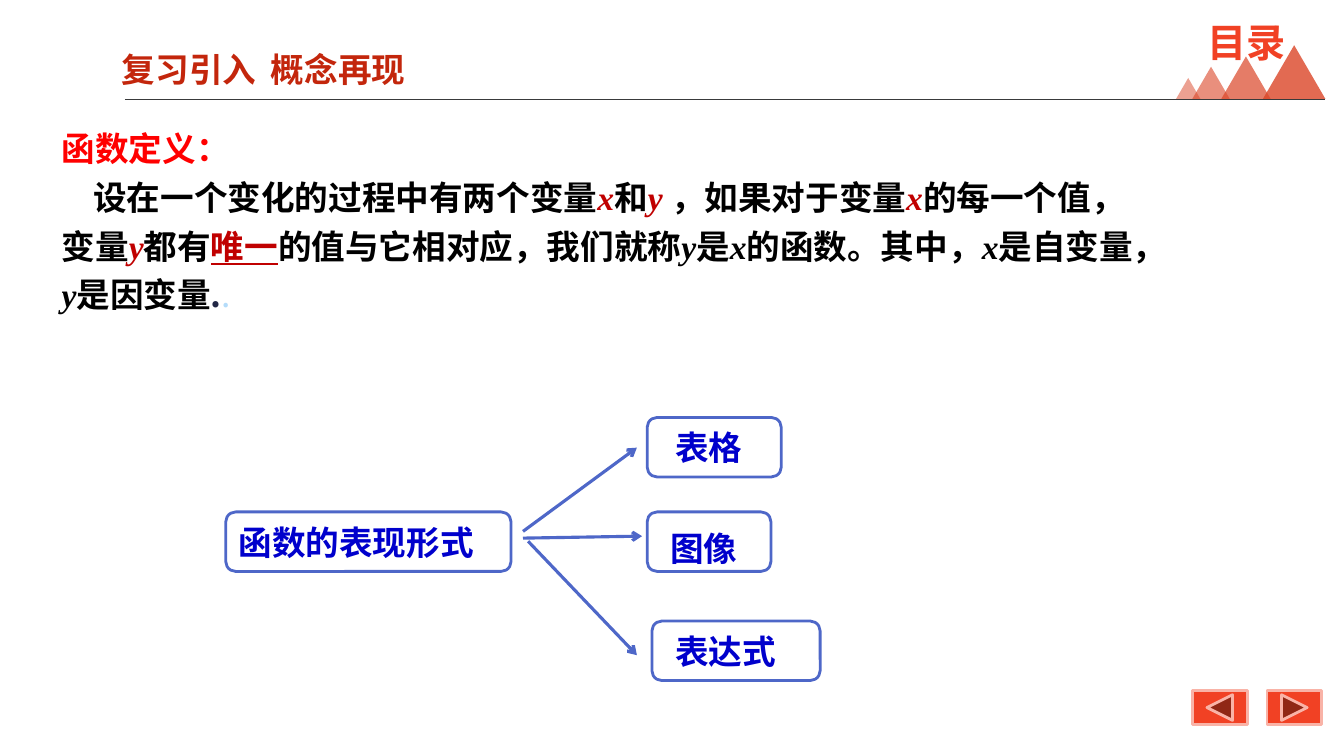
from lxml import etree
from pptx import Presentation
from pptx.dml.color import RGBColor
from pptx.enum.shapes import MSO_CONNECTOR, MSO_SHAPE as SHAPE
from pptx.enum.text import MSO_ANCHOR as ANCHOR, MSO_AUTO_SIZE as AUTO, PP_ALIGN as ALIGN
from pptx.oxml.ns import qn
from pptx.util import Cm, Pt

CJK, TIMES = "Noto Sans CJK SC", "Times New Roman"
RED, BLUE, ORANGE = "C00000", "4E67C8", "F14124"


def rgb(color):
    return RGBColor.from_string(color)


def add_text(p, text, size=24, font=CJK, color="000000", bold=True, italic=False,
             underline=False, spacing=0):
    """Add a run; spacing is extra space after each character, in points."""
    r = p.add_run()
    r.text = text
    f = r.font
    f.size, f.name, f.bold, f.italic, f.underline = Pt(size), font, bold, italic, underline
    f.color.rgb = rgb(color)
    etree.SubElement(f._element, qn("a:ea")).set("typeface", CJK)
    if spacing:
        f._element.set("spc", str(spacing * 100))


prs = Presentation()
prs.slide_width, prs.slide_height = Cm(33.87), Cm(19.05)
s = prs.slides.add_slide(prs.slide_layouts[1])
title, body = s.placeholders

# Header: mountains, rule and contents label
for left, width, opacity in [(31.83, 1.57, 80), (30.78, 1.24, 70), (30.05, 0.94, 60), (29.64, 0.61, 50)]:
    height = 0.86 * width
    sp = s.shapes.add_shape(SHAPE.ISOSCELES_TRIANGLE, Cm(left), Cm(2.49 - height), Cm(width), Cm(height))
    sp.shadow.inherit = False
    sp.fill.solid()
    sp.fill.fore_color.rgb = rgb("DB4527")
    sp.line.fill.background()
    fill_color = sp.fill._xPr.find(qn("a:solidFill"))[0]
    etree.SubElement(fill_color, qn("a:alpha")).set("val", str(opacity * 1000))

contents = s.shapes.add_textbox(Cm(30.18), Cm(0.33), Cm(2.49), Cm(1.45))
contents.text_frame.word_wrap = True
p = contents.text_frame.paragraphs[0]
p.alignment = ALIGN.CENTER
add_text(p, "目录", size=28, font=TIMES, color=ORANGE)

# Title
title.left, title.top, title.width, title.height = Cm(2.82), Cm(0.89), Cm(7.82), Cm(1.37)
tf = title.text_frame
tf.auto_size, tf.vertical_anchor = AUTO.NONE, ANCHOR.TOP
p = tf.paragraphs[0]
p.alignment, p.line_spacing = ALIGN.LEFT, 1.2
for text, spacing in [("复习引入", 0), (" ", 5), ("概念再现", 0)]:
    add_text(p, text, font="Arial", color="C3260C", spacing=spacing)

# Definition
plain = {}
var = {"font": TIMES, "italic": True}
red_var = {**var, "color": RED}
definition = [
    [("函数定义：", {"color": "FF0000"})],
    [("设在一个变化的过程中有两个变量", plain), ("x", red_var), ("和", plain), ("y ", red_var),
     ("，如果对于变量", plain), ("x", red_var), ("的每一个值，", plain)],
    [("变量", plain), ("y", red_var), ("都有", plain), ("唯一", {"color": RED, "underline": True}),
     ("的值与它相对应，我们就称", plain), ("y", var), ("是", plain), ("x", var),
     ("的函数。其中，", plain), ("x", var), ("是自变量，", plain)],
    [("y", var), ("是因变量", plain), (".", {"color": "212745"}),
     (".", {"color": "B4DCFA", "bold": False})],
]
body.left, body.top, body.width, body.height = Cm(1.3), Cm(3.1), Cm(32.1), Cm(5.9)
tf = body.text_frame
tf.auto_size = AUTO.NONE
for i, runs in enumerate(definition):
    p = tf.add_paragraph() if i else tf.paragraphs[0]
    pPr = p._p.get_or_add_pPr()
    pPr.set("marL", "0")
    pPr.set("indent", str(Cm(0.8) if i == 1 else 0))
    etree.SubElement(pPr, qn("a:buNone"))
    p.space_before = Pt(6 if i else 0)
    for text, style in runs:
        add_text(p, text, **style)

# Diagram boxes: text, left, top, width, left inset, downward text shift
boxes = [
    ("函数的表现形式", 5.69, 12.9, 7.19, 0.25, 0),
    ("表格", 16.31, 10.52, 3.38, 0.63, 0),
    ("图像", 16.31, 12.9, 3.12, 0.51, 0.3),
    ("表达式", 16.43, 15.65, 4.24, 0.51, 0),
]
for text, left, top, width, inset, shift in boxes:
    sp = s.shapes.add_shape(SHAPE.ROUNDED_RECTANGLE, Cm(left), Cm(top), Cm(width), Cm(1.5))
    sp.shadow.inherit = False
    sp.fill.background()
    sp.line.color.rgb, sp.line.width = rgb(BLUE), Pt(2)
    tf = sp.text_frame
    tf.margin_left, tf.margin_right = Cm(inset), 0
    tf.margin_top, tf.margin_bottom = Cm(shift), 0
    tf.vertical_anchor = ANCHOR.MIDDLE
    p = tf.paragraphs[0]
    p.alignment = ALIGN.LEFT
    add_text(p, text, font=TIMES, color="0000CC")

# Header rule and diagram arrows
lines = [
    (3.15, 2.49, 33.4, 2.49, "393A3B", 0.25, False),
    (13.18, 13.39, 16.05, 11.28, BLUE, 2.25, True),
    (13.18, 13.56, 16.18, 13.51, BLUE, 2.25, True),
    (13.31, 13.64, 16.05, 16.51, BLUE, 2.25, True),
]
for x1, y1, x2, y2, color, weight, arrow in lines:
    line = s.shapes.add_connector(MSO_CONNECTOR.STRAIGHT, Cm(x1), Cm(y1), Cm(x2), Cm(y2))
    line.line.color.rgb, line.line.width = rgb(color), Pt(weight)
    if arrow:
        etree.SubElement(line.line._get_or_add_ln(), qn("a:tailEnd")).set("type", "arrow")
    etree.SubElement(line._element.spPr, qn("a:effectLst"))

# Navigation buttons
for kind, left in [(SHAPE.ACTION_BUTTON_BACK_OR_PREVIOUS, 30.05), (SHAPE.ACTION_BUTTON_FORWARD_OR_NEXT, 31.93)]:
    sp = s.shapes.add_shape(kind, Cm(left), Cm(17.4), Cm(1.38), Cm(0.86))
    sp.shadow.inherit = False
    sp.fill.solid()
    sp.fill.fore_color.rgb = rgb(ORANGE)
    sp.line.color.rgb, sp.line.width = rgb("F9B3A7"), Pt(2)

prs.save("out.pptx")
